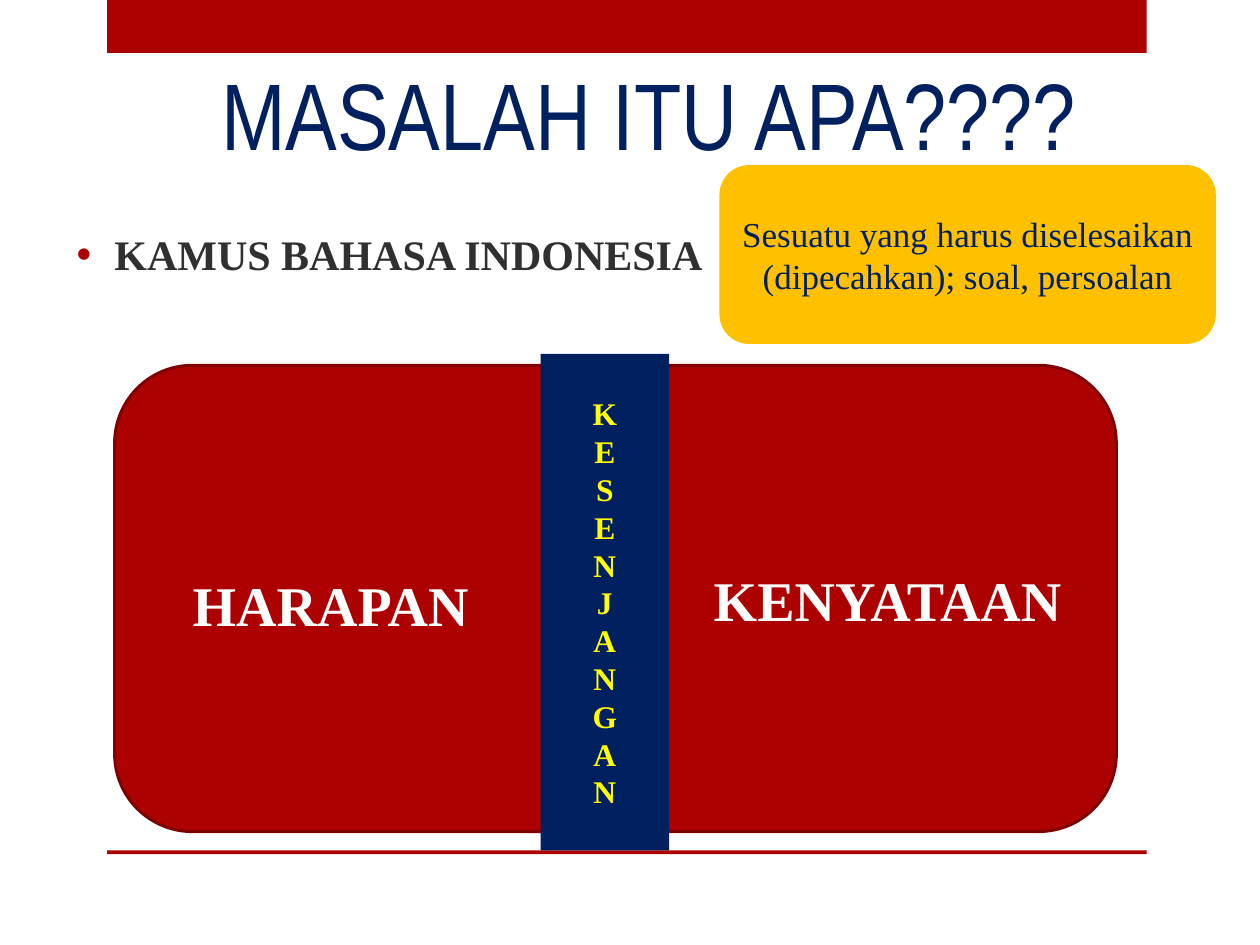
from lxml.etree import SubElement
from pptx import Presentation
from pptx.dml.color import RGBColor
from pptx.enum.shapes import MSO_SHAPE as Kind
from pptx.enum.text import MSO_ANCHOR as Anchor, PP_ALIGN as Align
from pptx.oxml.ns import qn
from pptx.util import Inches, Pt

COLORS = {
    "red": "AD0101", "edge": "800101", "navy": "002060", "gold": "FFC000",
    "yellow": "FFFF00", "white": "FFFFFF", "gray": "303030",
}
SERIF = "Times New Roman"


def color(name):
    return RGBColor.from_string(COLORS[name])


def write(shape, text, size, ink, font=SERIF, bold=False,
          align=Align.CENTER, anchor=Anchor.MIDDLE):
    """Fill the shape with one paragraph for each line of text."""
    frame = shape.text_frame
    frame.word_wrap = True
    frame.vertical_anchor = anchor
    frame.text = text
    for para in frame.paragraphs:
        para.alignment = align
        face = para.runs[0].font
        face.name, face.size, face.bold = font, Pt(size), bold
        face.color.rgb = color(ink)
    return shape


def block(slide, kind, box, fill, edge=None):
    shape = slide.shapes.add_shape(kind, *map(Inches, box))
    shape.shadow.inherit = False
    shape.fill.solid()
    shape.fill.fore_color.rgb = color(fill)
    if edge:
        shape.line.color.rgb = color(edge)
        shape.line.width = Pt(1.75)
    else:
        shape.line.fill.background()
    return shape


def label(slide, box, text, **style):
    shape = slide.shapes.add_textbox(*map(Inches, box))
    return write(shape, text, **style)


def bullet(para, mark, ink, indent):
    props = para._p.get_or_add_pPr()
    props.set("marL", str(Inches(indent)))
    props.set("indent", str(-Inches(indent)))
    fill = SubElement(SubElement(props, qn("a:buClr")), qn("a:srgbClr"))
    fill.set("val", COLORS[ink])
    SubElement(props, qn("a:buFont")).set("typeface", "Arial")
    SubElement(props, qn("a:buChar")).set("char", mark)


def frame(slide, left, top, width, height):
    """Red band above and thin red rule below the content."""
    thin = 0.03
    block(slide, Kind.RECTANGLE, (left, top, width, 0.42), "red")
    block(slide, Kind.RECTANGLE,
          (left, top + height - thin, width, thin), "red")


def meaning(slide, left, top, width, height):
    """Dictionary bullet with its definition in a gold box."""
    entry = label(slide, (left, top + 0.31, 8.25, 0.79),
                  "KAMUS BAHASA INDONESIA", size=24, ink="gray", bold=True,
                  align=Align.LEFT)
    bullet(entry.text_frame.paragraphs[0], "•", "red", 0.3)
    wide = 3.94
    note = block(slide, Kind.ROUNDED_RECTANGLE,
                 (left + width - wide, top, wide, height), "gold")
    write(note, "Sesuatu yang harus diselesaikan (dipecahkan); soal, persoalan",
          size=20, ink="navy")


def gap(slide, left, top, width, height):
    """Hope and reality, parted by a column of letters."""
    block(slide, Kind.ROUNDED_RECTANGLE, (left, top, width, height),
          "red", edge="edge")
    bar = block(slide, Kind.RECTANGLE,
                (left + 3.38, top - 0.09, 1.02, height + 0.24), "navy")
    write(bar, "\n".join("KESENJANGAN"), size=18, ink="yellow", bold=True)
    for text, dx, dy in (("HARAPAN", 0.22, 1.52), ("KENYATAAN", 4.64, 1.48)):
        label(slide, (left + dx, top + dy, 2.99, 0.75), text,
              size=32, ink="white", bold=True)


def main():
    deck = Presentation()
    deck.slide_width, deck.slide_height = Inches(10), Inches(7.5)
    slide = deck.slides.add_slide(deck.slide_layouts[6])
    frame(slide, 0.85, 0, 8.25, 6.78)
    label(slide, (1.44, 0.21, 7.42, 1.18), "MASALAH ITU APA????",
          size=54, ink="navy", font="Arial Narrow", anchor=Anchor.BOTTOM)
    meaning(slide, 0.51, 1.31, 9.14, 1.42)
    gap(slide, 0.91, 2.9, 7.95, 3.7)
    deck.save("out.pptx")


if __name__ == "__main__":
    main()
